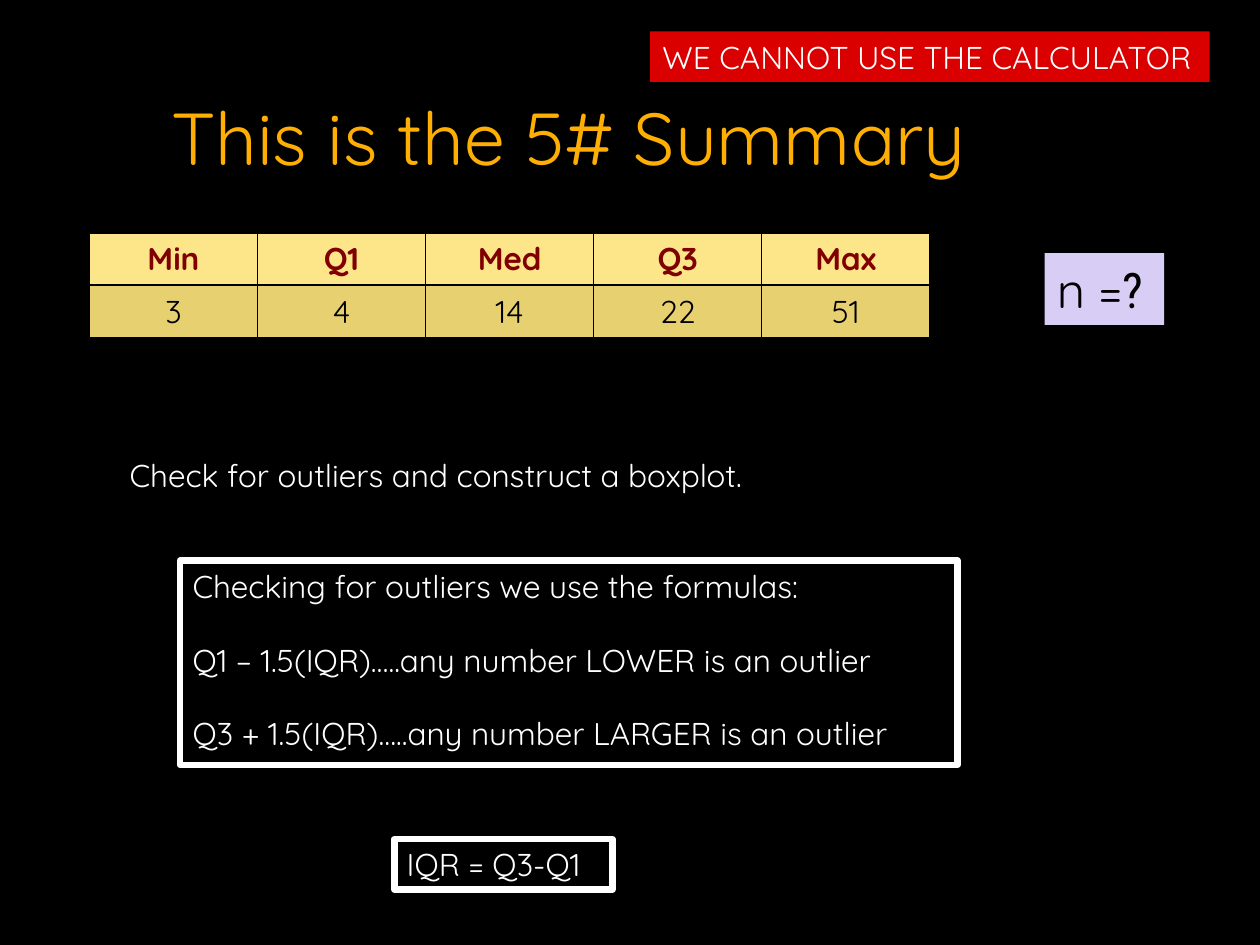
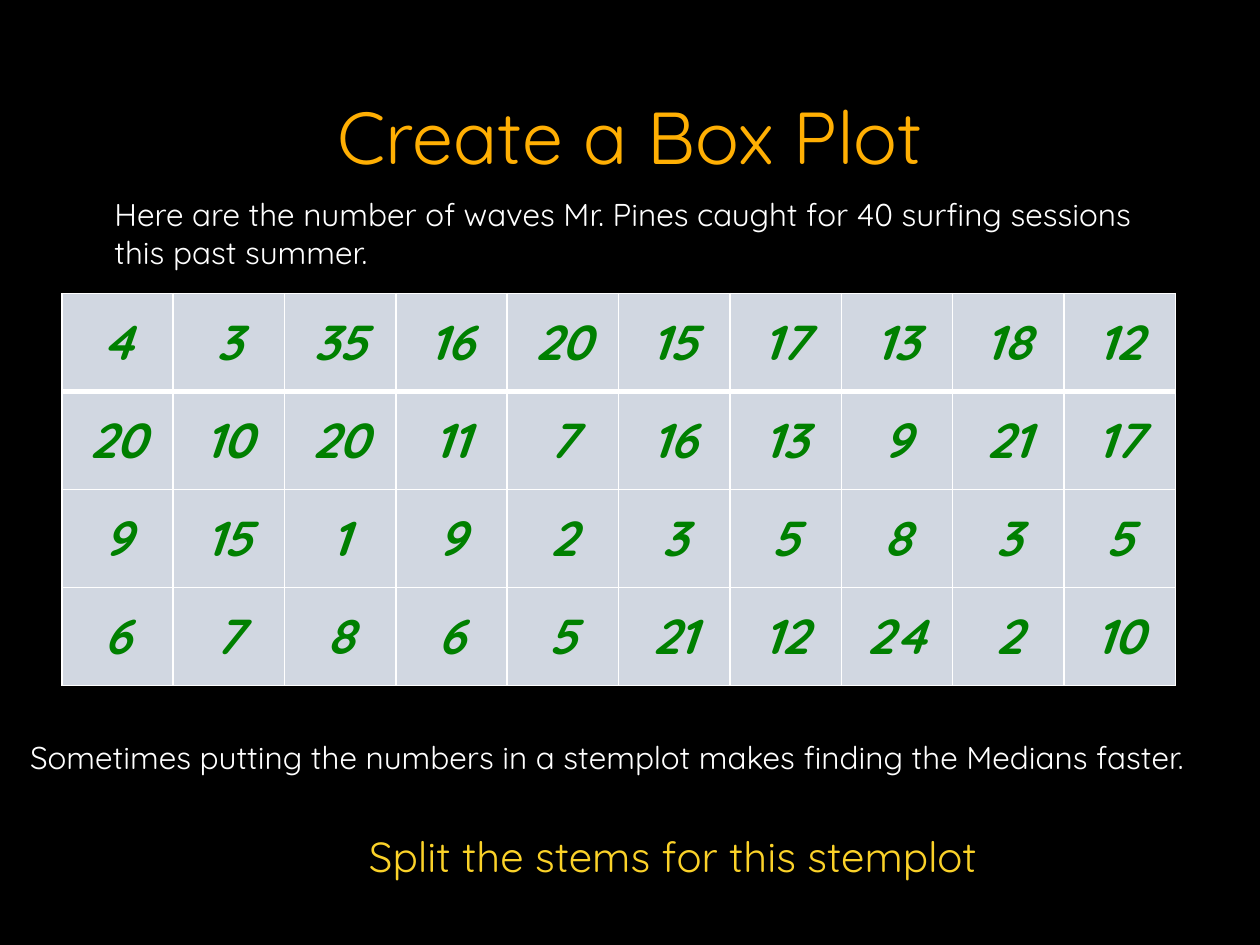
"""Build two statistics slides on the five-number summary and box plots."""
from dataclasses import dataclass
from typing import NamedTuple, Optional

from pptx import Presentation
from pptx.dml.color import RGBColor
from pptx.enum.shapes import MSO_SHAPE as Shape
from pptx.enum.text import MSO_ANCHOR as Anchor, PP_ALIGN as Align
from pptx.oxml.xmlchemy import OxmlElement
from pptx.util import Inches, Pt


@dataclass(frozen=True)
class Theme:
    font: str = "Quicksand"
    symbol_font: str = "Roboto Condensed"
    black: str = "000000"
    white: str = "FFFFFF"
    orange: str = "FFAF03"
    yellow: str = "FBD229"
    red: str = "DA0000"
    lilac: str = "D8CDF5"
    maroon: str = "800000"
    green: str = "008000"
    header_fill: str = "FDE689"
    value_fill: str = "E6D070"
    data_fill: str = "D1D7E1"
    title_size: float = 42
    body_size: float = 18
    prompt_size: float = 24
    large_size: float = 28
    paragraph_gap: float = 20.5
    frame_width: float = 3.75


T = Theme()


class Box(NamedTuple):
    left: float
    top: float
    width: float
    height: float

    def emu(self) -> list:
        return [Inches(v) for v in self]


class Style(NamedTuple):
    color: str = T.white
    size: float = T.body_size
    bold: bool = False
    italic: bool = False
    font: str = T.font


@dataclass(frozen=True)
class Note:
    box: Box
    paragraphs: list
    style: Style = Style()
    fill: Optional[str] = None
    line: Optional[str] = None


class RowStyle(NamedTuple):
    fill: str
    text: Style
    top: float = 1
    bottom: float = 1


@dataclass(frozen=True)
class Grid:
    box: Box
    rows: list
    styles: list
    border: str
    anchor: Anchor


def add_run(p, text: str, style: Style) -> None:
    r = p.add_run()
    r.text = text
    f = r.font
    f.name, f.size = style.font, Pt(style.size)
    f.bold, f.italic = style.bold, style.italic
    f.color.rgb = RGBColor.from_string(style.color)


def new_slide(prs, title: str, box: Box):
    s = prs.slides.add_slide(prs.slide_layouts[5])
    sp = s.shapes.title
    sp.left, sp.top, sp.width, sp.height = box.emu()
    tf = sp.text_frame
    tf.word_wrap, tf.vertical_anchor = True, Anchor.MIDDLE
    p = tf.paragraphs[0]
    p.alignment = Align.CENTER
    add_run(p, title, Style(T.orange, T.title_size))
    return s


def add_note(s, note: Note) -> None:
    if note.fill:
        sp = s.shapes.add_shape(Shape.RECTANGLE, *note.box.emu())
        sp.shadow.inherit = False
        sp.fill.solid()
        sp.fill.fore_color.rgb = RGBColor.from_string(note.fill)
        if note.line:
            sp.line.color.rgb = RGBColor.from_string(note.line)
            sp.line.width = Pt(T.frame_width)
        else:
            sp.line.fill.background()
    else:
        sp = s.shapes.add_textbox(*note.box.emu())
    tf = sp.text_frame
    tf.word_wrap, tf.vertical_anchor = True, Anchor.TOP
    for i, runs in enumerate(note.paragraphs):
        p = tf.add_paragraph() if i else tf.paragraphs[0]
        p.alignment = Align.LEFT
        if i:
            p.space_before = Pt(T.paragraph_gap)
        for text, font in runs:
            add_run(p, text, note.style._replace(font=font))


def add_border(cell, side: str, color: str, width: float) -> None:
    ln = OxmlElement(f"a:ln{side}")
    ln.set("w", str(Pt(width)))
    fill = OxmlElement("a:solidFill")
    clr = OxmlElement("a:srgbClr")
    clr.set("val", color)
    fill.append(clr)
    ln.append(fill)
    cell._tc.get_or_add_tcPr().append(ln)


def add_grid(s, grid: Grid) -> None:
    n_rows, n_cols = len(grid.rows), len(grid.rows[0])
    table = s.shapes.add_table(n_rows, n_cols, *grid.box.emu()).table
    table.first_row = table.horz_banding = False
    for col in table.columns:
        col.width = Inches(grid.box.width / n_cols)
    for row, values, style in zip(table.rows, grid.rows, grid.styles):
        row.height = Inches(grid.box.height / n_rows)
        for cell, value in zip(row.cells, values):
            cell.vertical_anchor = grid.anchor
            for side, width in (("L", 1), ("R", 1), ("T", style.top), ("B", style.bottom)):
                add_border(cell, side, grid.border, width)
            cell.fill.solid()
            cell.fill.fore_color.rgb = RGBColor.from_string(style.fill)
            p = cell.text_frame.paragraphs[0]
            p.alignment = Align.CENTER
            add_run(p, str(value), style.text)


def plain(*lines: str) -> list:
    return [[(line, T.font)] for line in lines]


def summary_slide(prs) -> None:
    s = new_slide(prs, "This is the 5# Summary", Box(1.18, 0.65, 6.66, 0.86))
    add_grid(s, Grid(
        Box(0.71, 1.85, 6.67, 0.81),
        [["Min", "Q1", "Med", "Q3", "Max"], [3, 4, 14, 22, 51]],
        [RowStyle(T.header_fill, Style(T.maroon, bold=True)),
         RowStyle(T.value_fill, Style(T.black))],
        T.black, Anchor.TOP))
    notes = [
        Note(Box(8.29, 2.01, 0.95, 0.57), [[("n =", T.font), ("?", T.symbol_font)]],
             Style(T.black, T.large_size), T.lilac),
        Note(Box(5.16, 0.25, 4.44, 0.4), plain("WE CANNOT USE THE CALCULATOR"), fill=T.red),
        Note(Box(0.93, 3.57, 5.42, 0.4), plain("Check for outliers and construct a boxplot.")),
        Note(Box(1.43, 4.45, 6.17, 1.62),
             plain("Checking for outliers we use the formulas:",
                   "Q1 – 1.5(IQR)…..any number LOWER is an outlier",
                   "Q3 + 1.5(IQR)…..any number LARGER is an outlier"),
             fill=T.black, line=T.white),
        Note(Box(3.13, 6.66, 1.73, 0.4), plain("IQR = Q3-Q1"), fill=T.black, line=T.white),
    ]
    for note in notes:
        add_note(s, note)


def box_plot_slide(prs) -> None:
    s = new_slide(prs, "Create a Box Plot", Box(0.67, 0.64, 8.66, 0.86))
    waves = [
        [4, 3, 35, 16, 20, 15, 17, 13, 18, 12],
        [20, 10, 20, 11, 7, 16, 13, 9, 21, 17],
        [9, 15, 1, 9, 2, 3, 5, 8, 3, 5],
        [6, 7, 8, 6, 5, 21, 12, 24, 2, 10],
    ]
    data = RowStyle(T.data_fill, Style(T.green, T.large_size, True, True))
    styles = [data._replace(bottom=3), data._replace(top=3), data, data]
    add_grid(s, Grid(Box(0.49, 2.33, 8.84, 3.11), waves, styles, T.white, Anchor.MIDDLE))
    notes = [
        Note(Box(0.81, 1.5, 8.52, 0.71),
             plain("Here are the number of waves Mr. Pines caught for 40 surfing sessions "
                   "this past summer.")),
        Note(Box(0.14, 5.81, 9.86, 0.4),
             plain("Sometimes putting the numbers in a stemplot makes finding the Medians faster.")),
        Note(Box(2.83, 6.54, 5.12, 0.5), plain("Split the stems for this stemplot"),
             Style(T.yellow, T.prompt_size)),
    ]
    for note in notes:
        add_note(s, note)


def main() -> None:
    prs = Presentation()
    prs.slide_width, prs.slide_height = Inches(10), Inches(7.5)
    background = prs.slide_master.background.fill
    background.solid()
    background.fore_color.rgb = RGBColor.from_string(T.black)
    summary_slide(prs)
    box_plot_slide(prs)
    prs.save("out.pptx")


if __name__ == "__main__":
    main()
